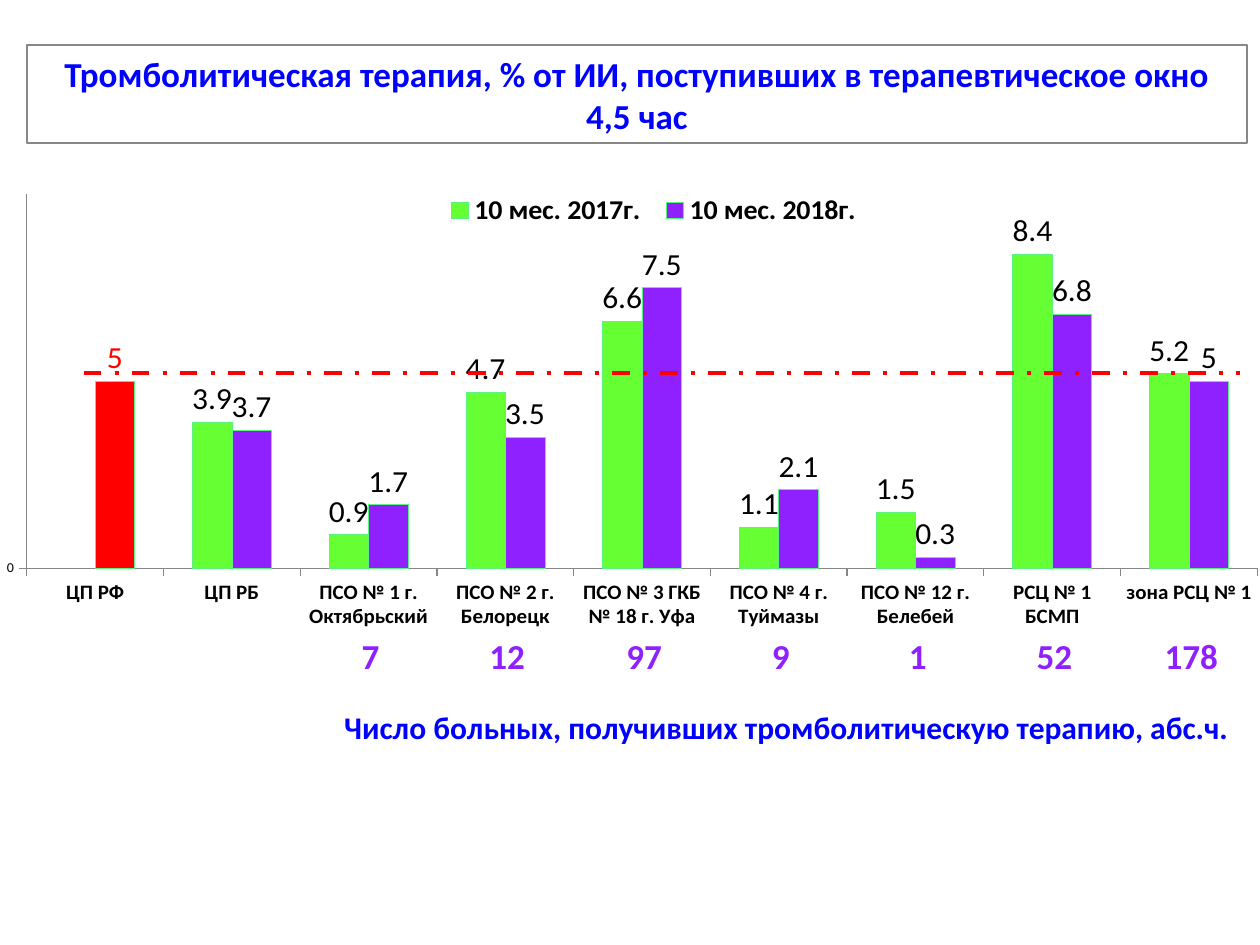
import pptx
import pptx.util
import pptx.chart.data
import pptx.dml.color
import pptx.enum.chart
import pptx.enum.dml
import pptx.enum.shapes
import pptx.enum.text
import pptx.oxml
import pptx.oxml.ns

PX = 914400 / 126
FONT = "Calibri"
BLUE, RED, LIME, VIOLET = "0000FF", "FF0000", "66FF33", "9021FF"
MINT, GRAY, WHITE, BLACK = "5BF37F", "878787", "FFFFFF", "000000"
NAMES = ["ЦП РФ", "ЦП РБ", "ПСО № 1 г. Октябрьский", "ПСО № 2 г. Белорецк",
         "ПСО № 3 ГКБ № 18 г. Уфа", "ПСО № 4 г. Туймазы",
         "ПСО № 12 г. Белебей", "РСЦ № 1 БСМП", "зона РСЦ № 1"]
YEARS = [
    ("10 мес. 2017г.", LIME, [None, 3.9, 0.9, 4.7, 6.6, 1.1, 1.5, 8.4, 5.2]),
    ("10 мес. 2018г.", VIOLET, [5, 3.7, 1.7, 3.5, 7.5, 2.1, 0.3, 6.8, 5]),
]
COUNTS = ["7", "12", "97", "9", "1", "52", "178"]


def px(*nums):
    return [pptx.util.Emu(round(n * PX)) for n in nums]


def rgb(code):
    return pptx.dml.color.RGBColor.from_string(code)


def paint(fill, code):
    fill.solid()
    fill.fore_color.rgb = rgb(code)


def stroke(line, code, width):
    line.color.rgb = rgb(code)
    line.width = pptx.util.Pt(width)


def style(font, size, code, bold=False):
    font.name = FONT
    font.size = pptx.util.Pt(size)
    font.bold = bold
    font.color.rgb = rgb(code)


def write(frame, text, size, code):
    frame.vertical_anchor = pptx.enum.text.MSO_ANCHOR.MIDDLE
    par = frame.paragraphs[0]
    par.alignment = pptx.enum.text.PP_ALIGN.CENTER
    run = par.add_run()
    run.text = text
    style(run.font, size, code, True)


def banner(shape, box, text, size, edge):
    shape.left, shape.top, shape.width, shape.height = px(*box)
    paint(shape.fill, WHITE)
    stroke(shape.line, edge, 0.75)
    frame = shape.text_frame
    frame.word_wrap = True
    frame.auto_size = pptx.enum.text.MSO_AUTO_SIZE.NONE
    write(frame, text, size, BLUE)


def place(item, box, inner=False):
    old = item.find(pptx.oxml.ns.qn("c:layout"))
    if old is not None:
        item.remove(old)
    target = '<c:layoutTarget val="inner"/>' if inner else ""
    modes = "".join(f'<c:{k}Mode val="edge"/>' for k in "xy")
    sizes = "".join(f'<c:{k} val="{v}"/>' for k, v in zip("xywh", box))
    layout = pptx.oxml.parse_xml(
        f'<c:layout {pptx.oxml.ns.nsdecls("c")}><c:manualLayout>'
        f"{target}{modes}{sizes}</c:manualLayout></c:layout>")
    item.insert(0 if inner else 1, layout)


def bars(slide, box):
    kinds = pptx.enum.chart
    data = pptx.chart.data.CategoryChartData()
    data.categories = NAMES
    for name, code, vals in YEARS:
        data.add_series(name, vals)
    chart = slide.shapes.add_chart(
        kinds.XL_CHART_TYPE.COLUMN_CLUSTERED, *px(*box), data).chart
    chart.has_title = False
    style(chart.font, 18, BLACK)
    chart.has_legend = True
    key = chart.legend
    key.position = kinds.XL_LEGEND_POSITION.TOP
    key.include_in_layout = False
    style(key.font, 16, BLACK, True)
    place(key._element, (0.36, 0.02, 0.34, 0.07))
    place(chart._chartSpace.chart.plotArea, (0.044, 0.021, 0.954, 0.868), True)

    cats, vals = chart.category_axis, chart.value_axis
    vals.has_major_gridlines = False
    vals.minimum_scale, vals.maximum_scale, vals.major_unit = 0, 10, 18
    for axis, size, bold in (cats, 12, True), (vals, 8, False):
        style(axis.tick_labels.font, size, BLACK, bold)
        axis.major_tick_mark = kinds.XL_TICK_MARK.OUTSIDE
        stroke(axis.format.line, GRAY, 0.75)

    plot = chart.plots[0]
    plot.vary_by_categories = False
    plot.gap_width, plot.overlap = 146, 0
    for row, (name, code, nums) in zip(plot.series, YEARS):
        paint(row.format.fill, code)
        stroke(row.format.line, MINT, 0.25)
        tags = row.data_labels
        tags.show_value = True
        tags.position = kinds.XL_LABEL_POSITION.OUTSIDE_END
        style(tags.font, 18, BLACK)
    first = plot.series[1].points[0]
    paint(first.format.fill, RED)
    stroke(first.format.line, MINT, 0.25)
    style(first.data_label.font, 18, RED)
    first.data_label.position = kinds.XL_LABEL_POSITION.OUTSIDE_END


def totals(slide, box):
    table = slide.shapes.add_table(1, len(COUNTS), *px(*box)).table
    table.first_row = table.horz_banding = False
    for cell, count in zip(table.rows[0].cells, COUNTS):
        cell.fill.background()
        write(cell.text_frame, count, 20, VIOLET)


def target(slide, left, right, top):
    line = slide.shapes.add_connector(
        pptx.enum.shapes.MSO_CONNECTOR.STRAIGHT, *px(left, top, right, top))
    stroke(line.line, RED, 2.5)
    line.line.dash_style = pptx.enum.dml.MSO_LINE.DASH_DOT
    line._element.spPr.append(pptx.oxml.parse_xml(
        f'<a:effectLst {pptx.oxml.ns.nsdecls("a")}/>'))


def main():
    deck = pptx.Presentation()
    deck.slide_width, deck.slide_height = px(1260, 945)
    slide = deck.slides.add_slide(deck.slide_layouts[5])
    banner(slide.shapes.title, (27, 45, 1220, 98),
           "Тромболитическая терапия, % от ИИ, поступивших "
           "в терапевтическое окно 4,5 час", 20, GRAY)
    bars(slide, (-30, 185, 1290, 444))
    totals(slide, (302, 630, 958, 54))
    target(slide, 84, 1240, 373)
    note = slide.shapes.add_textbox(*px(0, 0, 1, 1))
    banner(note, (323, 702, 927, 50),
           "Число больных, получивших тромболитическую терапию, абс.ч.",
           18, WHITE)
    deck.save("out.pptx")


if __name__ == "__main__":
    main()
